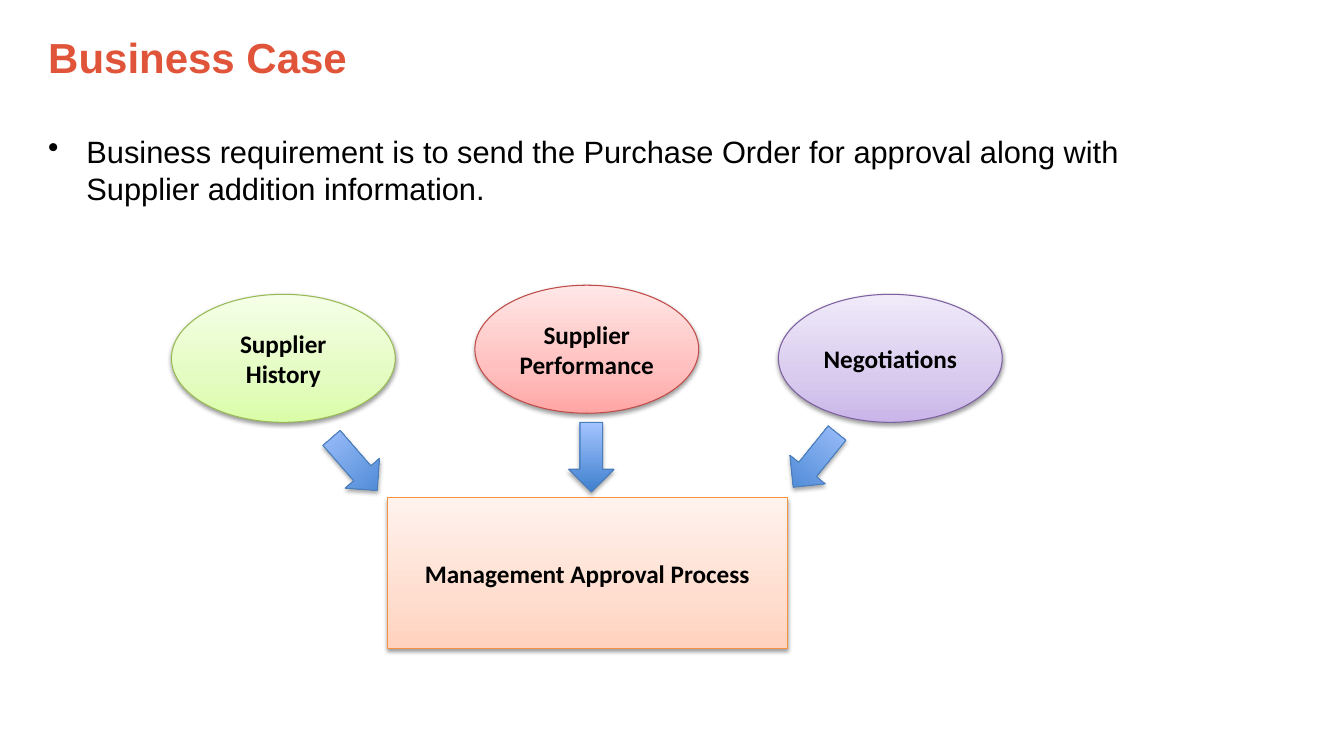
import pptx
import pptx.util
import pptx.dml.color
import pptx.enum.shapes
import pptx.enum.text
import pptx.oxml
import pptx.oxml.ns
import lxml.etree

Inches, Pt = pptx.util.Inches, pptx.util.Pt
RGBColor = pptx.dml.color.RGBColor
SHAPE = pptx.enum.shapes.MSO_SHAPE
ANCHOR = pptx.enum.text.MSO_ANCHOR
ALIGN = pptx.enum.text.PP_ALIGN
qn = pptx.oxml.ns.qn

BLACK = RGBColor(0x00, 0x00, 0x00)
TITLE = RGBColor(0xE0, 0x54, 0x39)

# Each palette: line colour, then gradient stops (percent, colour) from the bottom up
GREEN = (RGBColor(0x98, 0xB9, 0x55), (
    (0, RGBColor(0xDA, 0xFD, 0xA7)), (35, RGBColor(0xE4, 0xFC, 0xC2)), (100, RGBColor(0xF5, 0xFF, 0xE7))))
RED = (RGBColor(0xBF, 0x4C, 0x48), (
    (0, RGBColor(0xFF, 0xA6, 0xA5)), (35, RGBColor(0xFF, 0xC0, 0xBF)), (100, RGBColor(0xFF, 0xE7, 0xE7))))
PURPLE = (RGBColor(0x7D, 0x60, 0xA0), (
    (0, RGBColor(0xC9, 0xB5, 0xE8)), (35, RGBColor(0xD8, 0xCB, 0xEE)), (100, RGBColor(0xF0, 0xEA, 0xF9))))
ORANGE = (RGBColor(0xF6, 0x92, 0x40), (
    (0, RGBColor(0xFF, 0xD2, 0xBD)), (35, RGBColor(0xFF, 0xDE, 0xD0)), (100, RGBColor(0xFF, 0xF2, 0xED))))
BLUE = (RGBColor(0x4B, 0x7E, 0xBC), (
    (0, RGBColor(0x3F, 0x80, 0xCE)), (100, RGBColor(0xA4, 0xC4, 0xFF))))


def set_font(p, name, size, color, bold=False):
    p.font.name, p.font.size, p.font.bold = name, Pt(size), bold
    p.font.color.rgb = color


def add_color(parent, color):
    return lxml.etree.SubElement(parent, qn("a:srgbClr"), val=str(color))


def add_text(s, box, text, size, color, bold, anchor):
    tf = s.shapes.add_textbox(*map(Inches, box)).text_frame
    tf.word_wrap = True
    tf.vertical_anchor = anchor
    p = tf.paragraphs[0]
    p.text = text
    set_font(p, "Arial", size, color, bold)
    return p


def add_title(s, box, text):
    add_text(s, box, text, 30, TITLE, True, ANCHOR.MIDDLE)


def add_bullet(s, box, text):
    p = add_text(s, box, text, 22, BLACK, False, ANCHOR.TOP)
    pPr = p._p.get_or_add_pPr()
    pPr.set("marL", str(Inches(0.38)))
    pPr.set("indent", str(-Inches(0.38)))
    bullet = lxml.etree.Element(qn("a:buChar"), char="•")
    pPr.insert(0, bullet)


def add_node(s, kind, box, palette, text="", rotation=0, shadow_alpha=38, shadow_distance=1.6):
    line, stops = palette
    sp = s.shapes.add_shape(kind, *map(Inches, box))
    sp.rotation = rotation
    sp.line.color.rgb = line
    sp.line.width = Pt(0.75)

    # Gradient rising from the bottom edge
    sp.fill.gradient()
    sp.fill.gradient_angle = 90
    gradient = sp._element.spPr.find(".//" + qn("a:gsLst"))
    for stop in list(gradient):
        gradient.remove(stop)
    for percent, color in stops:
        add_color(lxml.etree.SubElement(gradient, qn("a:gs"), pos=str(percent * 1000)), color)

    # Soft shadow straight below
    sp.shadow.inherit = False
    effects = sp._element.spPr.find(qn("a:effectLst"))
    shadow = lxml.etree.SubElement(
        effects, qn("a:outerShdw"), blurRad=str(Pt(3.1)), dist=str(Pt(shadow_distance)),
        dir="5400000", rotWithShape="0")
    lxml.etree.SubElement(add_color(shadow, BLACK), qn("a:alpha"), val=str(shadow_alpha * 1000))

    if text:
        tf = sp.text_frame
        tf.word_wrap = True
        tf.vertical_anchor = ANCHOR.MIDDLE
        p = tf.paragraphs[0]
        p.text = text
        p.alignment = ALIGN.CENTER
        set_font(p, "Calibri", 18, BLACK, True)


def add_approval_diagram(s, left, top):
    # Inputs, spaced evenly with the middle one raised
    inputs = (("Supplier History", GREEN, 0.09),
              ("Supplier Performance", RED, 0),
              ("Negotiations", PURPLE, 0.09))
    for i, (text, palette, drop) in enumerate(inputs):
        add_node(s, SHAPE.OVAL, (left + i * 3.01, top + drop, 2.22, 1.27), palette, text)

    # Approval step
    add_node(s, SHAPE.RECTANGLE, (left + 2.14, top + 2.11, 3.97, 1.49), ORANGE,
             "Management Approval Process")

    # Arrows from the inputs to the approval step
    for x, y, rotation in ((1.59, 1.43, 319), (3.94, 1.36, 0), (6.16, 1.39, 39)):
        add_node(s, SHAPE.DOWN_ARROW, (left + x, top + y, 0.45, 0.69), BLUE,
                 rotation=rotation, shadow_alpha=35, shadow_distance=1.8)


def main():
    prs = pptx.Presentation()
    prs.slide_width, prs.slide_height = Inches(13.33), Inches(7.5)
    s = prs.slides.add_slide(prs.slide_layouts[6])
    add_title(s, (0.38, 0, 9.71, 1.13), "Business Case")
    add_bullet(s, (0.38, 1.27, 11.36, 5.44),
               "Business requirement is to send the Purchase Order for approval along with "
               "Supplier addition information.")
    add_approval_diagram(s, 1.7, 2.83)
    prs.save("out.pptx")


if __name__ == "__main__":
    main()
